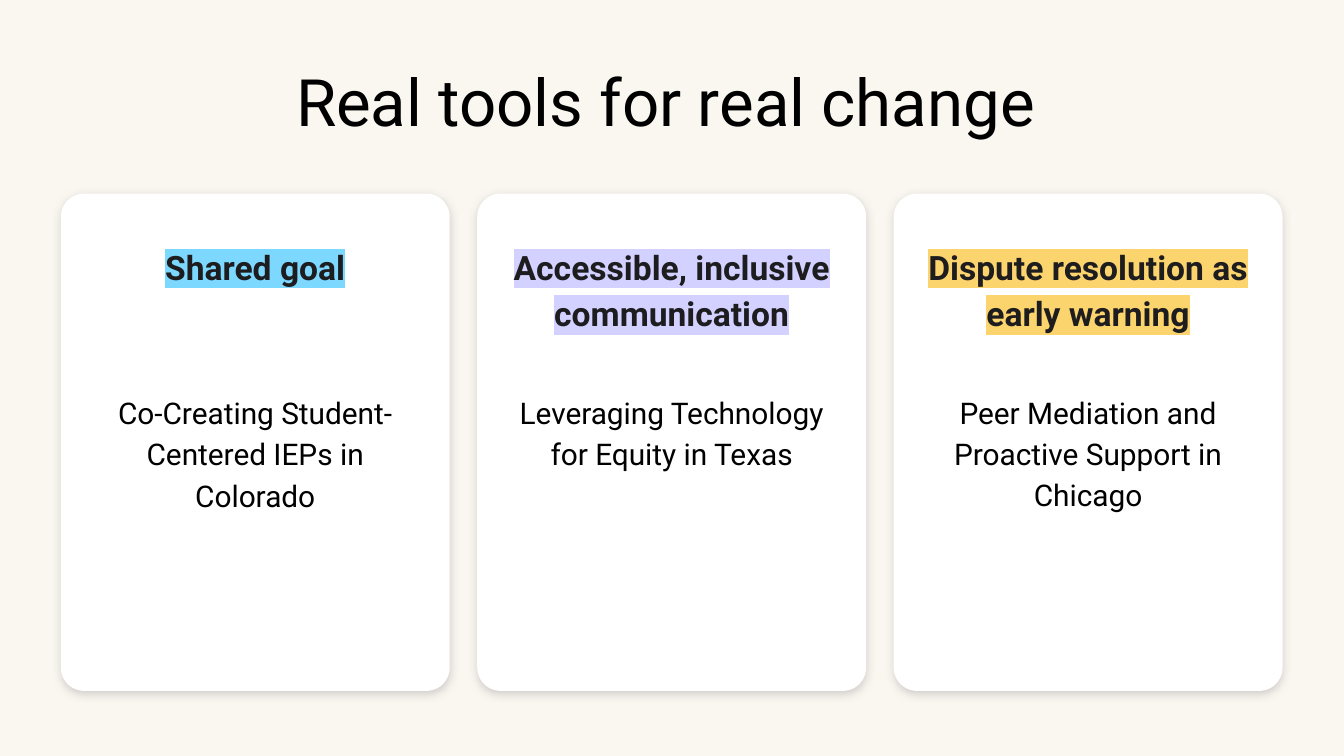
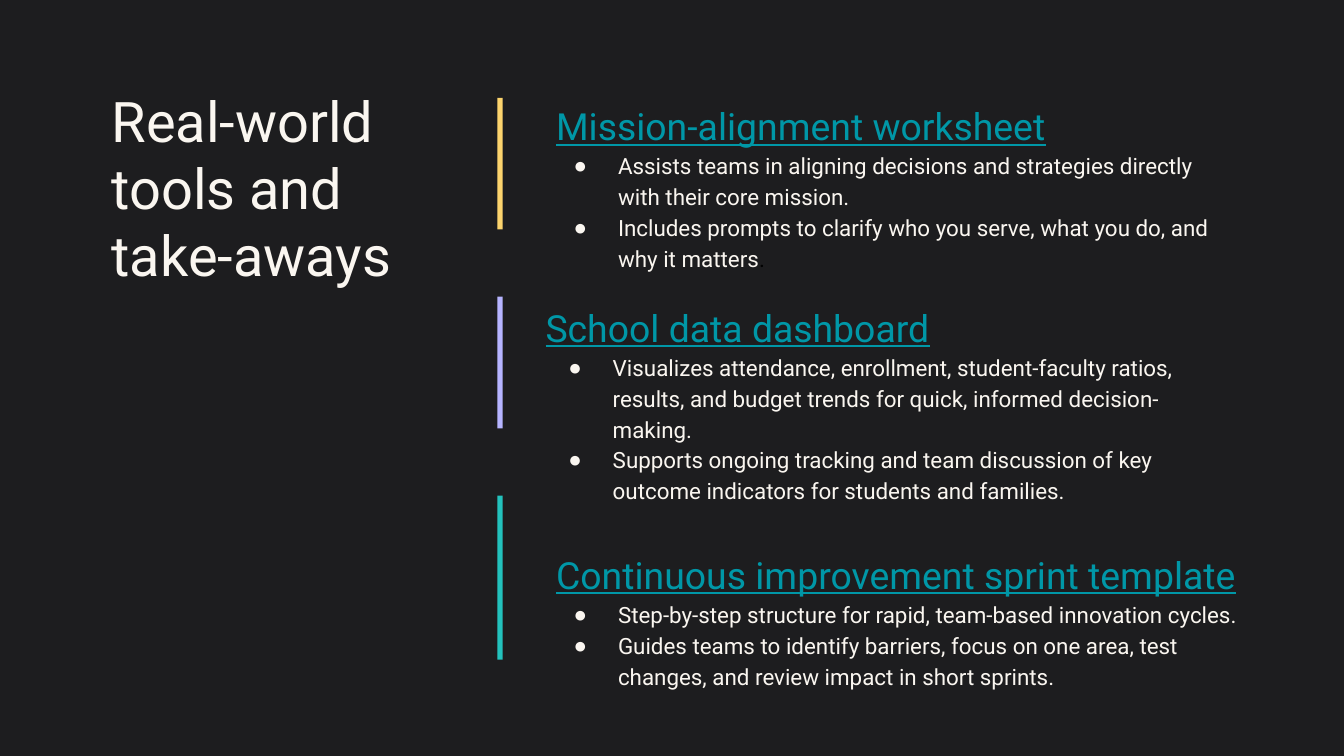
"""Build two slides on practical tools for school teams."""
import dataclasses

import lxml.etree
import pptx
import pptx.dml.color
import pptx.enum.shapes
import pptx.enum.text
import pptx.oxml.ns
import pptx.util

Cm = pptx.util.Cm
Pt = pptx.util.Pt
Align = pptx.enum.text.PP_ALIGN
Shape = pptx.enum.shapes.MSO_SHAPE


@dataclasses.dataclass(frozen=True)
class Theme:
    font: str = "Roboto"
    cream: str = "FAF6F0"
    dark: str = "1D1D1F"
    black: str = "000000"
    white: str = "FFFFFF"
    shade: str = "ADADAD"
    link: str = "0097A7"
    sky: str = "7DD8FF"
    lilac: str = "D2D1FF"
    gold: str = "FCD46D"
    violet: str = "B6B4FF"
    teal: str = "23C2BD"
    title: int = 35
    side: int = 30
    head: int = 20
    label: int = 18
    text: int = 16
    point: int = 12
    lead: float = 1.15


def rgb(color):
    return pptx.dml.color.RGBColor.from_string(color)


def node(parent, tag, **attrs):
    return lxml.etree.SubElement(parent, pptx.oxml.ns.qn(tag), attrs)


class Deck:
    def __init__(self, theme):
        self.theme = theme
        self.prs = pptx.Presentation()
        self.prs.slide_width = Cm(25.4)
        self.prs.slide_height = Cm(14.29)
        self.slide = None

    def page(self, layout, back):
        plan = self.prs.slide_layouts.get_by_name(layout)
        self.slide = self.prs.slides.add_slide(plan)
        fill = self.slide.background.fill
        fill.solid()
        fill.fore_color.rgb = rgb(back)

    def run(self, para, text, size, color, bold=False, line=False, mark=None):
        run = para.add_run()
        run.text = text
        font = run.font
        font.size = Pt(size)
        font.bold = bold
        font.underline = line
        font.color.rgb = rgb(color)
        if mark:
            light = node(run._r.get_or_add_rPr(), "a:highlight")
            node(light, "a:srgbClr", val=mark)
        font.name = self.theme.font

    def frame(self, shape, insets):
        frame = shape.text_frame
        frame.word_wrap = True
        frame.auto_size = pptx.enum.text.MSO_AUTO_SIZE.NONE
        frame.vertical_anchor = pptx.enum.text.MSO_ANCHOR.TOP
        (frame.margin_left, frame.margin_top,
         frame.margin_right, frame.margin_bottom) = map(Cm, insets)
        return frame

    def place(self, shape, box):
        shape.left, shape.top, shape.width, shape.height = map(Cm, box)

    def para(self, frame, first, align, lead, before=0):
        para = frame.paragraphs[0] if first else frame.add_paragraph()
        para.alignment = align
        para.line_spacing = lead
        para.space_before = Pt(before)
        return para

    def title(self, text, box, size, color, align, lead):
        shape = self.slide.shapes.title
        self.place(shape, box)
        para = self.para(self.frame(shape, (0, 0, 0, 0)), True, align, lead)
        self.run(para, text, size, color)

    def block(self, kind, box, color):
        shape = self.slide.shapes.add_shape(kind, *map(Cm, box))
        shape.shadow.inherit = False
        shape.fill.solid()
        shape.fill.fore_color.rgb = rgb(color)
        shape.line.fill.background()
        return shape

    def card(self, box, label, mark, text, gap):
        look = self.theme
        shape = self.block(Shape.ROUNDED_RECTANGLE, box, look.white)
        shape.adjustments[0] = 0.06
        glow = node(shape._element.spPr.find(pptx.oxml.ns.qn("a:effectLst")),
                    "a:outerShdw", blurRad=str(Pt(4.5)), dist=str(Pt(1.5)),
                    dir="5400000", algn="bl", rotWithShape="0")
        node(node(glow, "a:srgbClr", val=look.shade), "a:alpha", val="50000")
        frame = self.frame(shape, (0.51, 0.76, 0.51, 0.25))
        para = self.para(frame, True, Align.CENTER, look.lead)
        self.run(para, label, look.label, look.dark, bold=True, mark=mark)
        para = self.para(frame, False, Align.CENTER, look.lead, gap)
        self.run(para, text, look.text, look.black)

    def indent(self, para, left, hang, bullet=None):
        props = para._p.get_or_add_pPr()
        props.set("marL", str(Cm(left)))
        props.set("indent", str(Cm(hang)))
        if bullet:
            node(node(props, "a:buClr"), "a:srgbClr", val=self.theme.cream)
            node(props, "a:buChar", char=bullet)
        else:
            node(props, "a:buNone")

    def list(self, slot, box, head, inset, points):
        look = self.theme
        shape = self.slide.placeholders[slot]
        self.place(shape, box)
        frame = self.frame(shape, (0, 0, 0.25, 0))
        para = self.para(frame, True, Align.LEFT, look.lead)
        self.indent(para, inset, 0)
        self.run(para, head, look.head, look.link, line=True)
        for point in points:
            para = self.para(frame, False, Align.LEFT, look.lead)
            self.indent(para, 1.27, -0.84, "●")
            for text, color in point:
                self.run(para, text, look.point, color)

    def prune(self):
        for shape in list_of(self.slide.placeholders):
            if not shape.text_frame.text:
                shape._element.getparent().remove(shape._element)


def list_of(items):
    return [item for item in items]


def cards(deck):
    look = deck.theme
    deck.page("Title Only", look.cream)
    deck.title("Real tools for real change", (0.76, 1.27, 23.65, 1.93),
               look.title, look.black, Align.CENTER, 0.95)
    rows = [
        ("Shared goal", look.sky,
         "Co-Creating Student-Centered IEPs in Colorado", 55),
        ("Accessible, inclusive communication", look.lilac,
         "Leveraging Technology for Equity in Texas", 30),
        ("Dispute resolution as early warning", look.gold,
         "Peer Mediation and Proactive Support in Chicago", 30),
    ]
    for col, row in enumerate(rows):
        deck.card((1.15 + 7.87 * col, 3.66, 7.35, 9.4), *row)


def tools(deck):
    look = deck.theme
    deck.page("Comparison", look.dark)
    deck.title("Real-world tools and take-aways", (2.11, 1.63, 5.82, 3.43),
               look.side, look.cream, Align.LEFT, 1.0)
    bars = [(look.gold, 2.49), (look.violet, 2.49), (look.teal, 3.1)]
    for row, (color, height) in enumerate(bars):
        deck.block(Shape.RECTANGLE, (9.4, 1.85 + 3.76 * row, 0.1, height), color)
    lists = [
        ((10.41, 1.83, 13.26, 1.9), "Mission-alignment worksheet", 0.1, [
            [("Assists teams in aligning decisions and strategies directly "
              "with their core mission.", look.cream)],
            [("Includes prompts to clarify who you serve, what you do, and "
              "why it matters", look.cream), (".", look.black)],
        ]),
        ((10.31, 5.64, 13.03, 1.9), "School data dashboard", 0, [
            [("Visualizes attendance, enrollment, student-faculty ratios, "
              "results, and budget trends for quick, informed "
              "decision-making.", look.cream)],
            [("Supports ongoing tracking and team discussion of key "
              "outcome indicators for students and families.", look.cream)],
        ]),
        ((10.41, 10.31, 13.87, 2.97),
         "Continuous improvement sprint template", 0.1, [
            [("Step-by-step structure for rapid, team-based innovation "
              "cycles.", look.cream)],
            [("Guides teams to identify barriers, focus on one area, test "
              "changes, and review impact in short sprints.", look.cream)],
        ]),
    ]
    for slot, item in enumerate(lists, 1):
        deck.list(slot, *item)
    deck.prune()


def main():
    deck = Deck(Theme())
    cards(deck)
    tools(deck)
    deck.prs.save("out.pptx")


if __name__ == "__main__":
    main()
